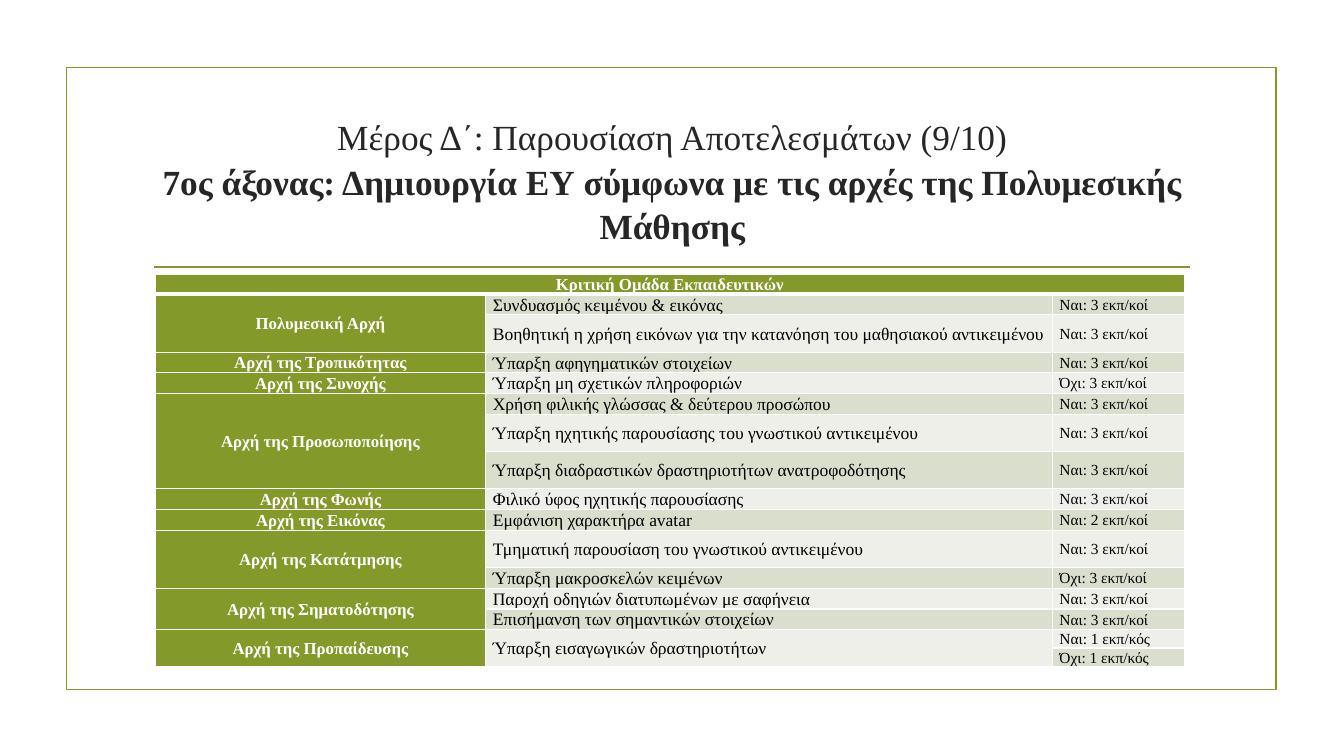
import pptx
import pptx.util
import pptx.dml.color
import pptx.enum.shapes
import pptx.enum.text
import pptx.oxml
import pptx.oxml.ns

RGBColor = pptx.dml.color.RGBColor
OLIVE = RGBColor(0x83, 0x99, 0x2A)
BAND_DARK = RGBColor(0xD9, 0xDE, 0xCD)
BAND_LIGHT = RGBColor(0xED, 0xEF, 0xE8)
WHITE = RGBColor(0xFF, 0xFF, 0xFF)
BLACK = RGBColor(0, 0, 0)
CHARCOAL = RGBColor(0x26, 0x26, 0x26)
FONT = "Times New Roman"
CENTER = pptx.enum.text.PP_ALIGN.CENTER
LEFT = pptx.enum.text.PP_ALIGN.LEFT
MIDDLE = pptx.enum.text.MSO_ANCHOR.MIDDLE

presentation = pptx.Presentation()
presentation.slide_width = pptx.util.Inches(13.33)
presentation.slide_height = pptx.util.Inches(7.5)
slide = presentation.slides.add_slide(presentation.slide_layouts[5])
COL = presentation.slide_width / 200
ROW = presentation.slide_height / 150


def box(left, top, width, height):
    return int(left * COL), int(top * ROW), int(width * COL), int(height * ROW)


def format_text(run, size, color, bold):
    values = {"name": FONT, "size": pptx.util.Pt(size), "bold": bold}
    for key, value in values.items():
        setattr(run.font, key, value)
    run.font.color.rgb = color


frame = slide.shapes.add_shape(
    pptx.enum.shapes.MSO_SHAPE.RECTANGLE, *box(9.9, 13.4, 180, 123.4))
frame.fill.background()
frame.shadow.inherit = False

rule_left, rule_top, rule_width, _ = box(22.95, 53, 154.2, 0)
title_rule = slide.shapes.add_connector(
    pptx.enum.shapes.MSO_CONNECTOR.STRAIGHT,
    rule_left, rule_top, rule_left + rule_width, rule_top)
title_rule._element.spPr.append(pptx.oxml.parse_xml(
    f'<a:effectLst {pptx.oxml.ns.nsdecls("a")}/>'))
for outline in (frame.line, title_rule.line):
    outline.color.rgb = OLIVE
    outline.width = pptx.util.Pt(1.25)

title = slide.shapes.title
title.left, title.top, title.width, title.height = box(21.3, 21.4, 157.5, 28.6)
title_format = {"word_wrap": True, "vertical_anchor": MIDDLE,
                "auto_size": pptx.enum.text.MSO_AUTO_SIZE.NONE}
for key, value in title_format.items():
    setattr(title.text_frame, key, value)
heading = title.text_frame.paragraphs[0]
heading.alignment = CENTER
heading.line_spacing = 1.05
part = heading.add_run()
part.text = "Μέρος Δ΄: Παρουσίαση Αποτελεσμάτων (9/10)"
format_text(part, 25.2, CHARCOAL, False)
heading.add_line_break()
axis = heading.add_run()
axis.text = "7ος άξονας: Δημιουργία ΕΥ σύμφωνα με τις αρχές της Πολυμεσικής Μάθησης"
format_text(axis, 25.2, CHARCOAL, True)

YES = "Ναι: 3 εκπ/κοί"
NO = "Όχι: 3 εκπ/κοί"
SHORT, TALL = 3.6, 7.4
principles = [
    ("Πολυμεσική Αρχή", [
        ("Συνδυασμός κειμένου & εικόνας", YES, SHORT),
        ("Βοηθητική η χρήση εικόνων για την κατανόηση του μαθησιακού αντικειμένου", YES, TALL)]),
    ("Αρχή της Τροπικότητας", [("Ύπαρξη αφηγηματικών στοιχείων", YES, SHORT)]),
    ("Αρχή της Συνοχής", [("Ύπαρξη μη σχετικών πληροφοριών", NO, SHORT)]),
    ("Αρχή της Προσωποποίησης", [
        ("Χρήση φιλικής γλώσσας & δεύτερου προσώπου", YES, SHORT),
        ("Ύπαρξη ηχητικής παρουσίασης του γνωστικού αντικειμένου", YES, TALL),
        ("Ύπαρξη διαδραστικών δραστηριοτήτων ανατροφοδότησης", YES, TALL)]),
    ("Αρχή της Φωνής", [("Φιλικό ύφος ηχητικής παρουσίασης", YES, SHORT)]),
    ("Αρχή της Εικόνας", [("Εμφάνιση χαρακτήρα avatar", "Ναι: 2 εκπ/κοί", SHORT)]),
    ("Αρχή της Κατάτμησης", [
        ("Τμηματική παρουσίαση του γνωστικού αντικειμένου", YES, TALL),
        ("Ύπαρξη μακροσκελών κειμένων", NO, SHORT)]),
    ("Αρχή της Σηματοδότησης", [
        ("Παροχή οδηγιών διατυπωμένων με σαφήνεια", YES, SHORT),
        ("Επισήμανση των σημαντικών στοιχείων", YES, SHORT)]),
    ("Αρχή της Προπαίδευσης", [
        ("Ύπαρξη εισαγωγικών δραστηριοτήτων", "Ναι: 1 εκπ/κός", SHORT),
        ("", "Όχι: 1 εκπ/κός", SHORT)]),
]

rows = [("Κριτική Ομάδα Εκπαιδευτικών", "", "")]
heights = [SHORT]
merges = [((0, 0), (0, 2))]
for principle, criteria in principles:
    first = len(rows)
    for index, (criterion, answer, height) in enumerate(criteria):
        rows.append((principle if index == 0 else "", criterion, answer))
        heights.append(height)
    if len(criteria) > 1:
        merges.append(((first, 0), (len(rows) - 1, 0)))
merges.append(((len(rows) - 2, 1), (len(rows) - 1, 1)))

column_widths = [49.2, 84.3, 19.65]
results = slide.shapes.add_table(
    len(rows), 3, *box(23.1, 54.4, sum(column_widths), sum(heights))).table
for column, width in zip(results.columns, column_widths):
    column.width = int(width * COL)
for row, height in zip(results.rows, heights):
    row.height = int(height * ROW)
for start, end in merges:
    results.cell(*start).merge(results.cell(*end))

cell_format = {"margin_left": pptx.util.Inches(0.07), "margin_right": pptx.util.Inches(0.07),
               "margin_top": 0, "margin_bottom": 0, "vertical_anchor": MIDDLE}
column_styles = [(12, WHITE, True, CENTER), (12.5, BLACK, False, LEFT), (11, BLACK, False, LEFT)]
for r, texts in enumerate(rows):
    for c, text in enumerate(texts):
        cell = results.cell(r, c)
        for key, value in cell_format.items():
            setattr(cell, key, value)
        for side in "LRTB":
            thick = (r, side) in ((0, "B"), (1, "T"))
            cell._tc.get_or_add_tcPr().append(pptx.oxml.parse_xml(
                f'<a:ln{side} {pptx.oxml.ns.nsdecls("a")} w="{38100 if thick else 12700}">'
                f'<a:solidFill><a:srgbClr val="{WHITE}"/></a:solidFill></a:ln{side}>'))
        cell.fill.solid()
        band = BAND_DARK if r % 2 else BAND_LIGHT
        cell.fill.fore_color.rgb = OLIVE if r == 0 or c == 0 else band
        if text:
            size, color, bold, alignment = column_styles[c]
            entry = cell.text_frame.paragraphs[0]
            entry.alignment = alignment
            entry.line_spacing = 1.07
            run = entry.add_run()
            run.text = text
            format_text(run, size, color, bold)

presentation.save("out.pptx")
